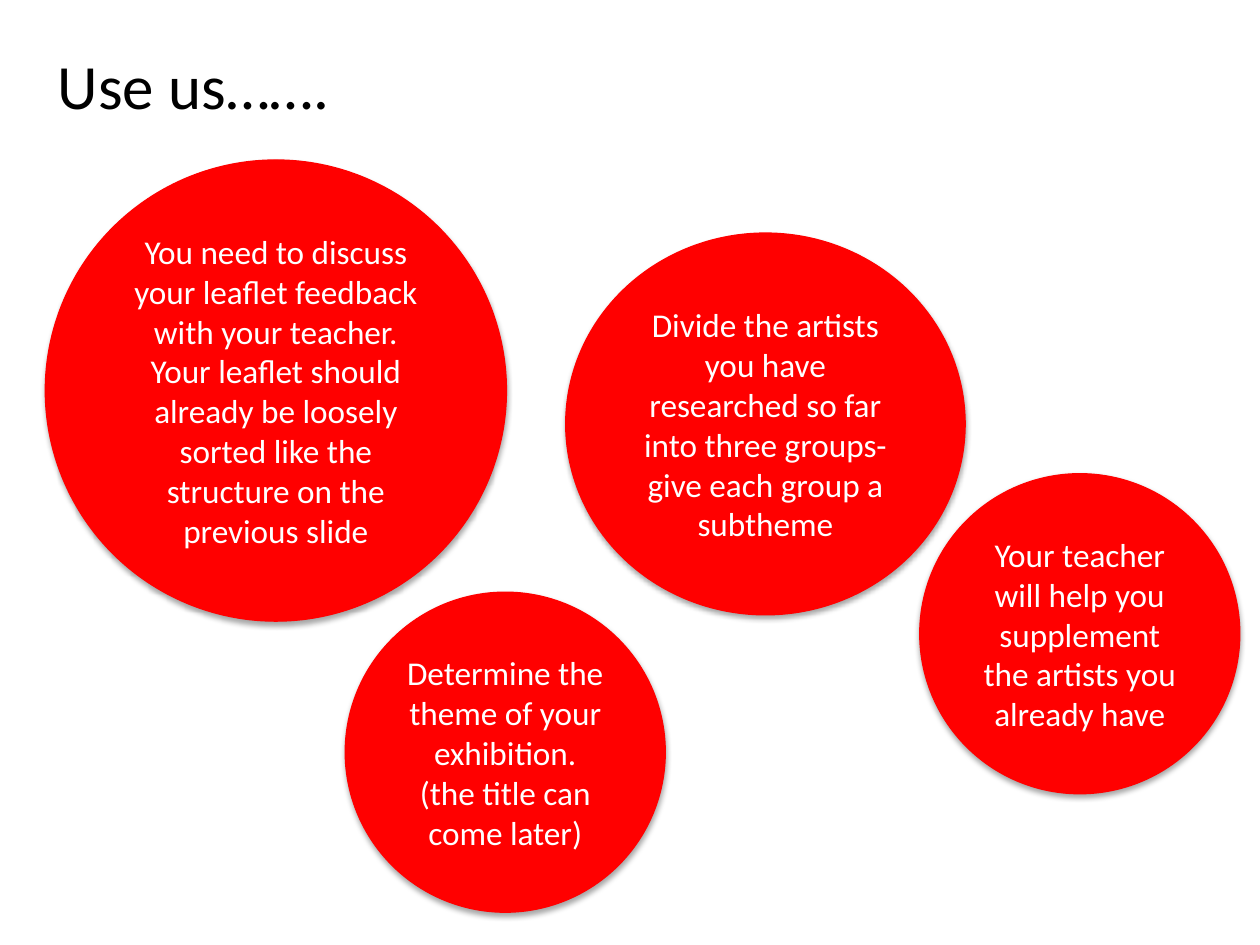
from lxml import etree
from pptx import Presentation
from pptx.dml.color import RGBColor
from pptx.enum import shapes, text
from pptx.oxml import ns
from pptx.util import Inches, Pt

RED = RGBColor(0xFF, 0x00, 0x00)
WHITE = RGBColor(0xFF, 0xFF, 0xFF)
BLACK = RGBColor(0x00, 0x00, 0x00)

TITLE = ("Use us…….", (0.36, 0.32, 2.38, 0.71))
CIRCLES = [
    ("You need to discuss your leaflet feedback with your teacher. "
     "Your leaflet should already be loosely sorted like the structure "
     "on the previous slide", (0.36, 1.27, 3.66, 3.66)),
    ("Determine the theme of your exhibition.\n(the title can come later)",
     (2.74, 4.7, 2.54, 2.54)),
    ("Divide the artists you have researched so far into three groups- "
     "give each group a subtheme", (4.49, 1.85, 3.17, 3.03)),
    ("Your teacher will help you supplement the artists you already have",
     (7.3, 3.76, 2.54, 2.54)),
]
TITLE_FONT = {"name": "Calibri", "size": Pt(36)}
CIRCLE_FONT = {"name": "Calibri", "size": Pt(19)}


def write(shape, words, font, color, align, anchor, wrap):
    frame = shape.text_frame
    frame.word_wrap = wrap
    frame.vertical_anchor = anchor
    para = frame.paragraphs[0]
    para.text = words
    para.alignment = align
    for span in para.runs:
        for key, value in font.items():
            setattr(span.font, key, value)
        span.font.color.rgb = color


def add_soft_shadow(shape):
    shape.shadow.inherit = False
    effects = shape._element.spPr.find(ns.qn("a:effectLst"))
    shadow = etree.SubElement(
        effects, ns.qn("a:outerShdw"), blurRad=str(Pt(3.1)),
        dist=str(Pt(1.8)), dir="5400000", rotWithShape="0")
    color = etree.SubElement(shadow, ns.qn("a:srgbClr"), val=str(BLACK))
    etree.SubElement(color, ns.qn("a:alpha"), val="35000")


def add_circle(page, words, place):
    circle = page.shapes.add_shape(
        shapes.MSO_SHAPE.OVAL, *map(Inches, place))
    circle.fill.solid()
    circle.fill.fore_color.rgb = RED
    circle.line.color.rgb = RED
    circle.line.width = Pt(0.75)
    add_soft_shadow(circle)
    write(circle, words, CIRCLE_FONT, WHITE, text.PP_ALIGN.CENTER,
          text.MSO_ANCHOR.MIDDLE, True)


def main():
    deck = Presentation()
    deck.slide_width, deck.slide_height = Inches(10), Inches(7.5)
    page = deck.slides.add_slide(deck.slide_layouts.get_by_name("Title Only"))
    words, place = TITLE
    title = page.shapes.title
    title.left, title.top, title.width, title.height = map(Inches, place)
    write(title, words, TITLE_FONT, BLACK, text.PP_ALIGN.LEFT,
          text.MSO_ANCHOR.TOP, False)
    title.text_frame.auto_size = text.MSO_AUTO_SIZE.SHAPE_TO_FIT_TEXT
    for words, place in CIRCLES:
        add_circle(page, words, place)
    deck.save("out.pptx")


if __name__ == "__main__":
    main()
